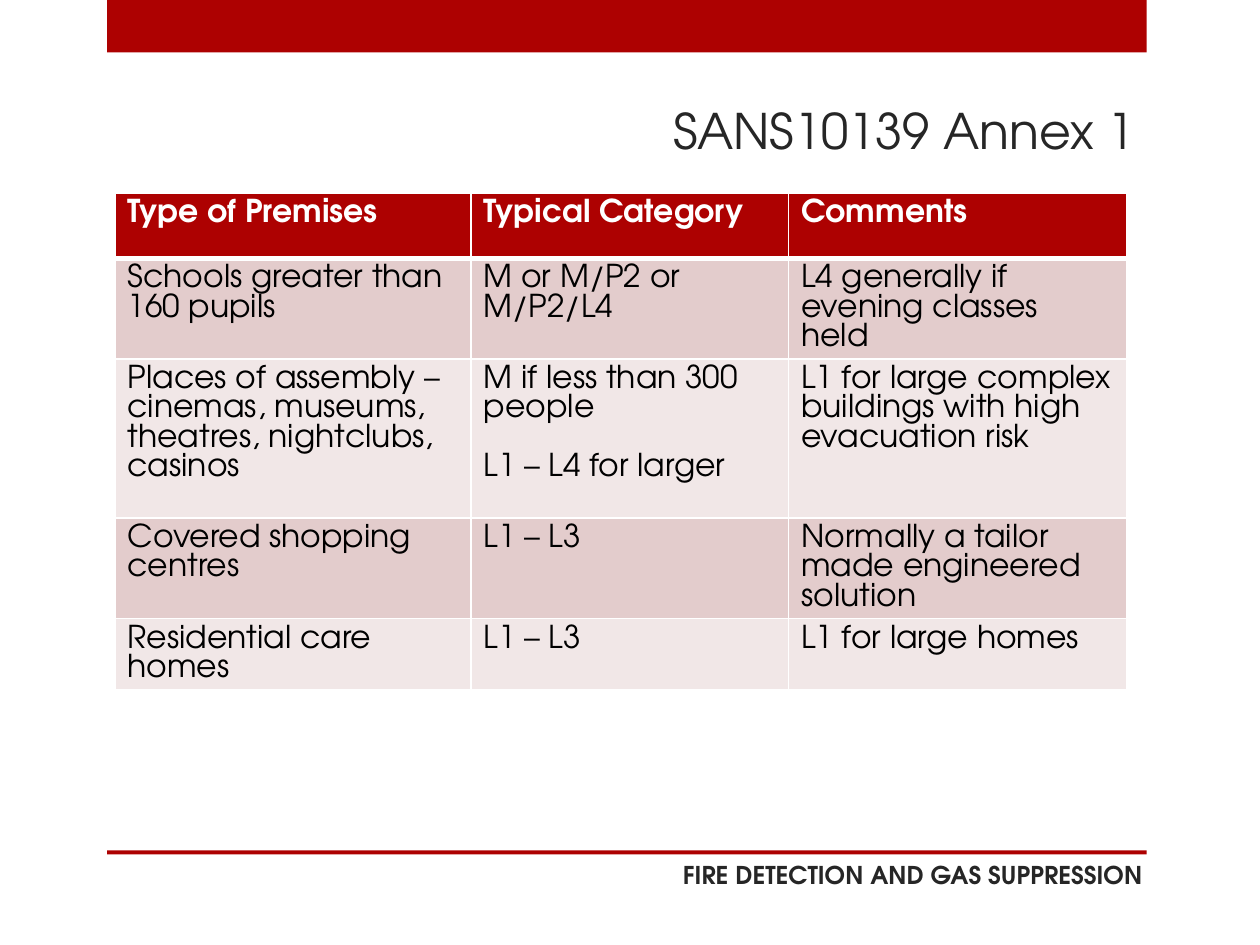
from lxml import etree
from pptx import Presentation
from pptx.dml.color import RGBColor
from pptx.enum import shapes, text
from pptx.oxml.ns import qn
from pptx.util import Pt

FONT = "TeX Gyre Adventor"
COLORS = {"red": "AD0101", "ink": "262626", "black": "000000", "white": "FFFFFF",
          "dark_band": "E3CCCC", "light_band": "F1E7E7"}

TITLE = "SANS10139 Annex 1"
FOOTER = "FIRE DETECTION AND GAS SUPPRESSION"
PREMISES = [
    ("Type of Premises", "Typical Category", "Comments"),
    ("Schools greater than 160 pupils", "M or M/P2 or M/P2/L4",
     "L4 generally if evening classes held"),
    ("Places of assembly – cinemas, museums, theatres, nightclubs, casinos",
     "M if less than 300 people\nL1 – L4 for larger",
     "L1 for large complex buildings with high evacuation risk"),
    ("Covered shopping centres", "L1 – L3",
     "Normally a tailor made engineered solution"),
    ("Residential care homes", "L1 – L3", "L1 for large homes"),
]
COL_WIDTHS = (203.5, 181.5, 193)
ROW_HEIGHTS = (37.4, 57.5, 91, 57.5, 40.8)
LINE_PITCH = 16.75


def rgb(name):
    return RGBColor.from_string(COLORS[name])


def write(tf, content, size, color, bold=False, align=None, pitch=None):
    """Fill a text frame, one paragraph per line, a blank line's gap between them."""
    for i, line in enumerate(content.split("\n")):
        p = tf.paragraphs[0] if i == 0 else tf.add_paragraph()
        if align is not None:
            p.alignment = align
        if pitch:
            p.line_spacing = Pt(pitch)
            if i:
                p.space_before = Pt(pitch)
        r = p.add_run()
        r.text = line
        r.font.name, r.font.size, r.font.bold = FONT, Pt(size), bold
        r.font.color.rgb = rgb(color)


def add_bar(slide, top, height):
    sp = slide.shapes.add_shape(shapes.MSO_SHAPE.RECTANGLE,
                                Pt(61.2), Pt(top), Pt(594), Pt(height))
    sp.shadow.inherit = False
    sp.fill.solid()
    sp.fill.fore_color.rgb = rgb("red")
    sp.line.fill.background()


def add_label(slide, content, box, anchor, **fmt):
    tf = slide.shapes.add_textbox(*map(Pt, box)).text_frame
    tf.word_wrap = True
    tf.vertical_anchor = anchor
    write(tf, content, align=text.PP_ALIGN.RIGHT, **fmt)


def set_borders(cell, bottom):
    tc_pr = cell._tc.get_or_add_tcPr()
    widths = {"a:lnL": 1, "a:lnR": 1, "a:lnT": 1, "a:lnB": bottom}
    for i, (tag, width) in enumerate(widths.items()):
        ln = etree.Element(qn(tag), w=str(Pt(width)))
        fill = etree.SubElement(ln, qn("a:solidFill"))
        etree.SubElement(fill, qn("a:srgbClr"), val=COLORS["white"])
        tc_pr.insert(i, ln)


def add_premises_table(slide):
    table = slide.shapes.add_table(len(PREMISES), len(COL_WIDTHS), Pt(65.7), Pt(110.2),
                                   Pt(sum(COL_WIDTHS)), Pt(sum(ROW_HEIGHTS))).table
    for col, width in zip(table.columns, COL_WIDTHS):
        col.width = Pt(width)
    for i, (row, height, values) in enumerate(zip(table.rows, ROW_HEIGHTS, PREMISES)):
        row.height = Pt(height)
        header = i == 0
        band = "red" if header else ("light_band", "dark_band")[i % 2]
        for cell, value in zip(row.cells, values):
            cell.fill.solid()
            cell.fill.fore_color.rgb = rgb(band)
            set_borders(cell, bottom=3 if header else 1)
            write(cell.text_frame, value, size=18, bold=header, pitch=LINE_PITCH,
                  color="white" if header else "black")


def main():
    prs = Presentation()
    prs.slide_width, prs.slide_height = Pt(720), Pt(540)
    slide = prs.slides.add_slide(prs.slide_layouts[6])
    add_bar(slide, top=0, height=30)
    add_bar(slide, top=486, height=2.2)
    add_label(slide, FOOTER, (48.2, 485.3, 612, 28.8), text.MSO_ANCHOR.MIDDLE,
              size=14, color="ink", bold=True)
    add_label(slide, TITLE, (59.8, 54, 595.4, 64.8), text.MSO_ANCHOR.TOP,
              size=28, color="ink")
    add_premises_table(slide)
    prs.save("out.pptx")


if __name__ == "__main__":
    main()
